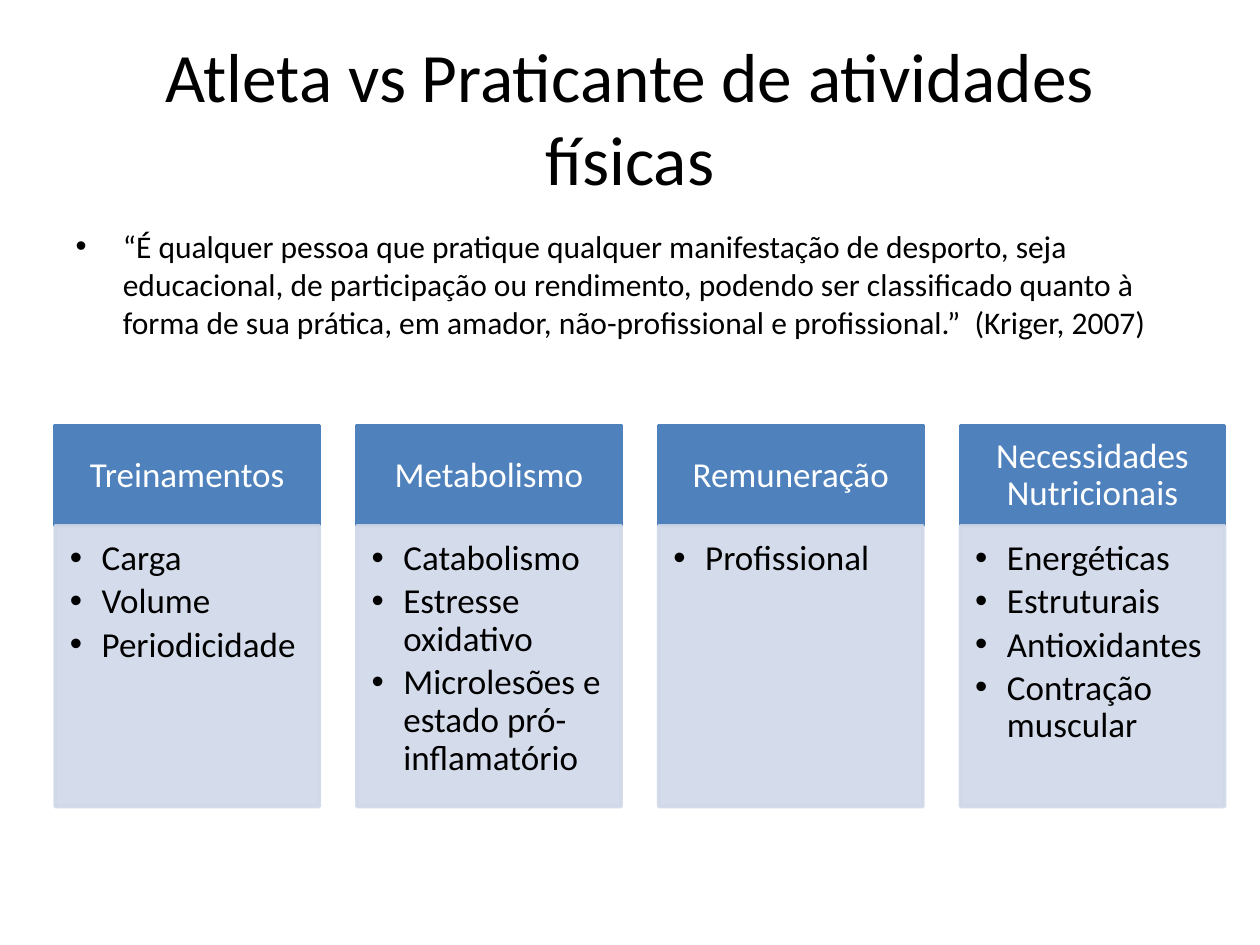
from lxml.etree import SubElement
from pptx import Presentation
from pptx.dml.color import RGBColor
from pptx.enum.shapes import MSO_SHAPE
from pptx.enum.text import MSO_ANCHOR, MSO_AUTO_SIZE, PP_ALIGN
from pptx.oxml.ns import qn
from pptx.util import Cm, Pt

FONT = "Calibri"
BLACK, WHITE, BLUE, PALE_BLUE = "000000", "FFFFFF", "4F81BD", "D0D8E8"

TITLE = "Atleta vs Praticante de atividades físicas"
QUOTE = (
    "“É qualquer pessoa que pratique qualquer manifestação de desporto, seja "
    "educacional, de participação ou rendimento, podendo ser classificado quanto à "
    "forma de sua prática, em amador, não-profissional e profissional.”  (Kriger, 2007)"
)
TOPICS = {
    "Treinamentos": ["Carga", "Volume", "Periodicidade"],
    "Metabolismo": [
        "Catabolismo",
        "Estresse oxidativo",
        "Microlesões e estado pró-inflamatório",
    ],
    "Remuneração": ["Profissional"],
    "Necessidades Nutricionais": [
        "Energéticas",
        "Estruturais",
        "Antioxidantes",
        "Contração muscular",
    ],
}


def rgb(color):
    return RGBColor.from_string(color)


def set_font(paragraph, size, color):
    paragraph.font.name = FONT
    paragraph.font.size = Pt(size)
    paragraph.font.color.rgb = rgb(color)


def set_opacity(fill, percent):
    color = fill._xPr.find(qn("a:solidFill"))[0]
    SubElement(color, qn("a:alpha"), val=str(percent * 1000))


def add_bullet(paragraph, indent):
    properties = paragraph._p.get_or_add_pPr()
    properties.set("marL", str(indent))
    properties.set("indent", str(-indent))
    SubElement(properties, qn("a:buFont"), typeface="Arial")
    SubElement(properties, qn("a:buChar"), char="•")


def fill_placeholder(placeholder, text, size, left, top, width, height):
    placeholder.left, placeholder.top = left, top
    placeholder.width, placeholder.height = width, height
    frame = placeholder.text_frame
    frame.text = text
    frame.auto_size = MSO_AUTO_SIZE.NONE
    set_font(frame.paragraphs[0], size, BLACK)


def add_panel(slide, left, top, width, height, color, anchor, margins):
    """Add a filled rectangle; margins run left, top, right, bottom."""
    panel = slide.shapes.add_shape(MSO_SHAPE.RECTANGLE, left, top, width, height)
    panel.shadow.inherit = False
    panel.fill.solid()
    panel.fill.fore_color.rgb = rgb(color)
    panel.line.color.rgb = rgb(color)
    panel.line.width = Pt(2)
    frame = panel.text_frame
    frame.word_wrap = True
    frame.vertical_anchor = anchor
    (frame.margin_left, frame.margin_top,
     frame.margin_right, frame.margin_bottom) = map(Cm, margins)
    return panel


def add_topic(slide, heading, items, left, top, width, height):
    heading_height = Cm(2.02)
    header = add_panel(slide, left, top, width, heading_height, BLUE,
                       MSO_ANCHOR.MIDDLE, (0.41, 0.23, 0.41, 0.23))
    header.text_frame.text = heading
    caption = header.text_frame.paragraphs[0]
    caption.alignment = PP_ALIGN.CENTER
    caption.line_spacing = 0.9
    set_font(caption, 20, WHITE)

    details = add_panel(slide, left, top + heading_height, width,
                        height - heading_height, PALE_BLUE,
                        MSO_ANCHOR.TOP, (0.3, 0.3, 0.41, 0.43))
    set_opacity(details.fill, 90)
    set_opacity(details.line.fill, 90)
    details.text_frame.text = "\n".join(items)
    for item in details.text_frame.paragraphs:
        item.level = 1
        item.alignment = PP_ALIGN.LEFT
        item.line_spacing = 0.9
        item.space_after = Pt(3)
        add_bullet(item, Cm(0.64))
        set_font(item, 20, BLACK)


def add_topics(slide, left, top, width, height):
    """Spread the topic columns evenly across the box."""
    column_width = Cm(5.33)
    pitch = (width - column_width) // (len(TOPICS) - 1)
    for column, (heading, items) in enumerate(TOPICS.items()):
        add_topic(slide, heading, items, left + column * pitch, top,
                  column_width, height)


def main():
    presentation = Presentation()
    presentation.slide_width, presentation.slide_height = Cm(25.4), Cm(19.05)
    slide = presentation.slides.add_slide(presentation.slide_layouts[1])
    fill_placeholder(slide.shapes.title, TITLE, 39.6,
                     Cm(1.27), Cm(0.76), Cm(22.86), Cm(3.18))
    fill_placeholder(slide.placeholders[1], QUOTE, 18,
                     Cm(1.27), Cm(4.45), Cm(22.86), Cm(12.57))
    add_topics(slide, Cm(1.11), Cm(8.58), Cm(23.58), Cm(7.68))
    presentation.save("out.pptx")


if __name__ == "__main__":
    main()
